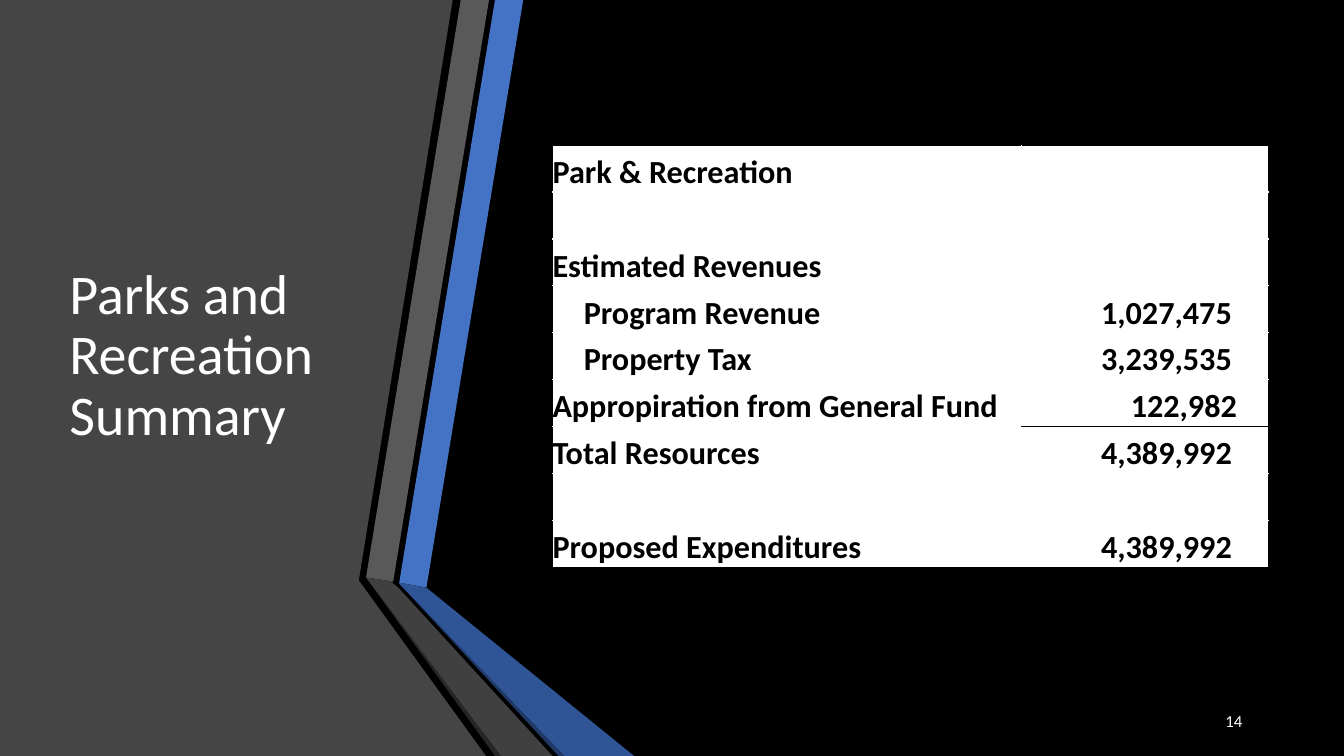
from pptx import Presentation
from pptx import util as u
from pptx.dml.color import RGBColor
from pptx.enum import text
from pptx.oxml import parse_xml
from pptx.oxml.ns import nsdecls

FONT = "Calibri"
COLORS = {
    "black": "000000", "white": "FFFFFF", "panel": "454545",
    "blue": "4472C4", "blue_fold": "2F5597", "blue_edge": "203864",
    "gray": "595959", "gray_fold": "404040", "gray_edge": "262626",
}
TITLE = "Parks and Recreation Summary"
PAGE_NUMBER = "14"
BUDGET = [
    ("Park & Recreation", 0, "", 0),
    ("", 0, "", 0),
    ("Estimated Revenues", 0, "", 0),
    ("Program Revenue", 0.31, "1,027,475", 0.36),
    ("Property Tax", 0.31, "3,239,535", 0.36),
    ("Appropiration from General Fund", 0, "122,982", 0.31),
    ("Total Resources", 0, "4,389,992", 0.36),
    ("", 0, "", 0),
    ("Proposed Expenditures", 0, "4,389,992", 0.36),
]
SUBTOTAL_ROW = 5
COLUMN_WIDTHS = (4.65, 2.45)
PANEL = [(0, 0), (4.49, 0), (3.56, 5.75), (3.56, 5.76), (4.82, 7.5), (0, 7.5)]
STRIPES = [
    ("blue", [(3.96, 5.78), (4.23, 5.83), (5.19, 0), (4.91, 0)]),
    ("gray", [(4.85, 0), (4.57, 0), (3.63, 5.73), (3.9, 5.77)]),
    ("gray_edge", [(3.63, 5.73), (4.91, 7.5), (4.97, 7.5)]),
    ("blue_edge", [(3.96, 5.79), (5.54, 7.5), (5.6, 7.5)]),
    ("blue_fold", [(3.96, 5.78), (3.96, 5.79), (5.6, 7.5), (6.29, 7.5), (4.23, 5.83)]),
    ("gray_fold", [(3.63, 5.73), (4.97, 7.5), (5.48, 7.5), (3.95, 5.83),
                   (3.89, 5.78), (3.9, 5.77)]),
]


def rgb(name):
    return RGBColor.from_string(COLORS[name])


def add_outline(shapes, color, points):
    corners = [(u.Inches(x), u.Inches(y)) for x, y in points]
    builder = shapes.build_freeform(*corners[0])
    builder.add_line_segments(corners[1:], close=True)
    shape = builder.convert_to_shape()
    shape.shadow.inherit = False
    shape.fill.solid()
    shape.fill.fore_color.rgb = rgb(color)
    shape.line.fill.background()


def write(paragraph, content, size, color, bold=False):
    run = paragraph.add_run()
    run.text = content
    run.font.name = FONT
    run.font.size = u.Pt(size)
    run.font.bold = bold
    run.font.color.rgb = rgb(color)


def add_text(slide, box, content, size, alignment, spacing):
    frame = slide.shapes.add_textbox(*map(u.Inches, box)).text_frame
    frame.word_wrap = True
    frame.vertical_anchor = text.MSO_ANCHOR.MIDDLE
    paragraph = frame.paragraphs[0]
    paragraph.alignment = alignment
    paragraph.line_spacing = spacing
    write(paragraph, content, size, "white")


def add_borders(cell, sides):
    properties = cell._tc.get_or_add_tcPr()
    for side in sides:
        properties.append(parse_xml(
            f'<a:ln{side} {nsdecls("a")} w="{u.Pt(0.5)}"><a:solidFill>'
            f'<a:srgbClr val="{COLORS["black"]}"/></a:solidFill></a:ln{side}>'))


def fill_cell(cell, content, left, right, alignment, sides):
    add_borders(cell, sides)
    cell.fill.solid()
    cell.fill.fore_color.rgb = rgb("white")
    cell.margin_left, cell.margin_right = u.Inches(left), u.Inches(right)
    cell.margin_top = cell.margin_bottom = 0
    cell.vertical_anchor = text.MSO_ANCHOR.BOTTOM
    if content:
        paragraph = cell.text_frame.paragraphs[0]
        paragraph.alignment = alignment
        write(paragraph, content, 23, "black", True)


def add_budget(slide):
    box = map(u.Inches, (5.48, 1.44, sum(COLUMN_WIDTHS), 4.19))
    table = slide.shapes.add_table(len(BUDGET), len(COLUMN_WIDTHS), *box).table
    table.first_row = table.horz_banding = False
    for column, width in zip(table.columns, COLUMN_WIDTHS):
        column.width = u.Inches(width)
    last = len(BUDGET) - 1
    for row, (label, indent, amount, margin) in enumerate(BUDGET):
        outer = ("T" if row == 0 else "") + ("B" if row == last else "")
        subtotal = {SUBTOTAL_ROW: "B", SUBTOTAL_ROW + 1: "T"}.get(row, "")
        fill_cell(table.cell(row, 0), label, indent, 0,
                  text.PP_ALIGN.LEFT, "L" + outer)
        fill_cell(table.cell(row, 1), amount, 0, margin,
                  text.PP_ALIGN.RIGHT, "R" + outer + subtotal)


def main():
    presentation = Presentation()
    presentation.slide_width = u.Inches(13.33)
    presentation.slide_height = u.Inches(7.5)
    slide = presentation.slides.add_slide(presentation.slide_layouts[6])
    slide.background.fill.solid()
    slide.background.fill.fore_color.rgb = rgb("black")
    add_outline(slide.shapes, "panel", PANEL)
    ribbon = slide.shapes.add_group_shape()
    for color, points in STRIPES:
        add_outline(ribbon.shapes, color, points)
    add_text(slide, (0.59, 0.75, 3.04, 5.58), TITLE, 40, text.PP_ALIGN.LEFT, 0.9)
    add_budget(slide)
    add_text(slide, (9.42, 6.95, 3, 0.4), PAGE_NUMBER, 12, text.PP_ALIGN.RIGHT, 1.0)
    presentation.save("out.pptx")


if __name__ == "__main__":
    main()
